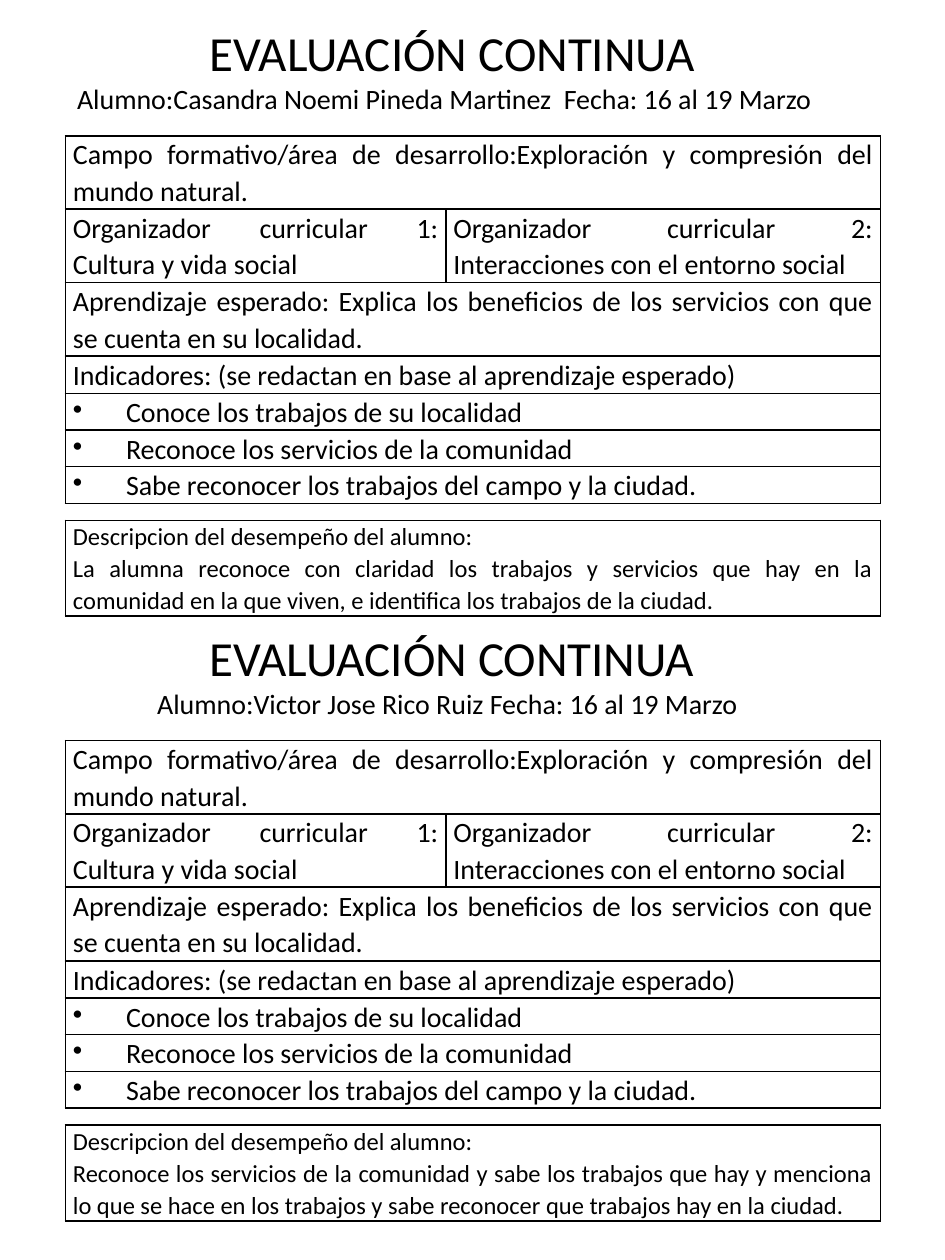
from lxml import etree
from pptx import Presentation
from pptx import util as u
from pptx.dml.color import RGBColor
from pptx.enum import text
from pptx.oxml import ns

BLACK = RGBColor(0x00, 0x00, 0x00)
FONT = "Calibri"
TABLE_LEFT = 1.32
COLUMNS = (7.67, 8.76)
CARD_PITCH = 12.19
BULLET_INDENT = u.Cm(1.07)

FIELD = ("Campo formativo/área de desarrollo:"
         "Exploración y compresión del mundo natural.")
ORGANIZERS = ("Organizador curricular 1: Cultura y vida social",
              "Organizador curricular 2: Interacciones con el entorno social")
LEARNING = ("Aprendizaje esperado: Explica los beneficios de los servicios "
            "con que se cuenta en su localidad.")
INDICATORS_HEADING = "Indicadores: (se redactan en base al aprendizaje esperado)"
INDICATORS = ("Conoce los trabajos de su localidad",
              "Reconoce los servicios de la comunidad",
              "Sabe reconocer los trabajos del campo y la ciudad.")
DESCRIPTION_HEADING = "Descripcion del desempeño del alumno:"

# Student line, heading left, heading width, description
STUDENTS = (
    ("Alumno:Casandra Noemi Pineda Martinez  Fecha: 16 al 19 Marzo", 1.3, 15.62,
     "La alumna reconoce con claridad los trabajos y servicios que hay en la "
     "comunidad en la que viven, e identifica los trabajos de la ciudad."),
    ("Alumno:Victor Jose Rico Ruiz Fecha: 16 al 19 Marzo", 2.92, 12.37,
     "Reconoce los servicios de la comunidad y sabe los trabajos que hay y "
     "menciona lo que se hace en los trabajos y sabe reconocer que trabajos "
     "hay en la ciudad."),
)


def style_paragraph(paragraph, size, alignment):
    paragraph.alignment = alignment
    paragraph.font.size = u.Pt(size)
    paragraph.font.name = FONT
    paragraph.font.color.rgb = BLACK


def fill_heading(shape, student, left, top, width):
    shape.left, shape.top = u.Cm(left), u.Cm(top)
    shape.width, shape.height = u.Cm(width), u.Cm(2.9)
    frame = shape.text_frame
    frame.word_wrap = True
    frame.auto_size = text.MSO_AUTO_SIZE.NONE
    frame.vertical_anchor = text.MSO_ANCHOR.TOP
    frame.text = f"EVALUACIÓN CONTINUA\n{student}"
    title, student_line = frame.paragraphs
    style_paragraph(title, 28, text.PP_ALIGN.CENTER)
    style_paragraph(student_line, 16, text.PP_ALIGN.LEFT)


def add_borders(cell):
    properties = cell._tc.get_or_add_tcPr()
    for index, side in enumerate(("lnL", "lnR", "lnT", "lnB")):
        line = etree.Element(ns.qn(f"a:{side}"), w=str(u.Pt(1)))
        fill = etree.SubElement(line, ns.qn("a:solidFill"))
        etree.SubElement(fill, ns.qn("a:srgbClr"), val=str(BLACK))
        properties.insert(index, line)


def add_bullet(paragraph):
    properties = paragraph._p.get_or_add_pPr()
    properties.set("marL", str(BULLET_INDENT))
    properties.set("indent", str(-BULLET_INDENT))
    etree.SubElement(properties, ns.qn("a:buChar"), char="•")


def fill_cell(cell, wording, size):
    cell.text = wording
    cell.margin_left = cell.margin_right = u.Cm(0.15)
    cell.margin_top = cell.margin_bottom = 0
    for paragraph in cell.text_frame.paragraphs:
        style_paragraph(paragraph, size, text.PP_ALIGN.JUSTIFY)
        paragraph.line_spacing = 1.07


def add_bordered_table(slide, top, columns, row_height, rows, size=16):
    """Add a plain table; a row with a single text spans every column."""
    frame = slide.shapes.add_table(
        len(rows), len(columns), u.Cm(TABLE_LEFT), u.Cm(top),
        u.Cm(sum(columns)), u.Cm(row_height * len(rows)))
    table = frame.table
    table.first_row = table.horz_banding = False
    for column, width in zip(table.columns, columns):
        column.width = u.Cm(width)
    for row_index, wordings in enumerate(rows):
        table.rows[row_index].height = u.Cm(row_height)
        if len(wordings) < len(columns):
            table.cell(row_index, 0).merge(table.cell(row_index, len(columns) - 1))
        for column_index, wording in enumerate(wordings):
            fill_cell(table.cell(row_index, column_index), wording, size)
    for cell in table.iter_cells():
        cell.fill.background()
        add_borders(cell)
    return table


def add_evaluation(slide, top, description):
    full_width = (sum(COLUMNS),)
    add_bordered_table(slide, top + 2.74, COLUMNS, 1.45,
                       ((FIELD,), ORGANIZERS, (LEARNING,)))
    indicator_rows = [(wording,) for wording in (INDICATORS_HEADING, *INDICATORS)]
    table = add_bordered_table(slide, top + 7.19, full_width, 0.72, indicator_rows)
    for row_index in range(1, len(indicator_rows)):
        add_bullet(table.cell(row_index, 0).text_frame.paragraphs[0])
    add_bordered_table(slide, top + 10.49, full_width, 1.9,
                       ((f"{DESCRIPTION_HEADING}\n{description}",),), size=14)


def main():
    presentation = Presentation()
    presentation.slide_width, presentation.slide_height = u.Cm(19.05), u.Cm(25.4)
    slide = presentation.slides.add_slide(presentation.slide_layouts[5])
    headings = (slide.shapes.title, slide.shapes.add_textbox(0, 0, 0, 0))
    for index, (student, left, width, description) in enumerate(STUDENTS):
        top = index * CARD_PITCH
        fill_heading(headings[index], student, left, top + 0.33, width)
        add_evaluation(slide, top, description)
    presentation.save("out.pptx")


if __name__ == "__main__":
    main()
